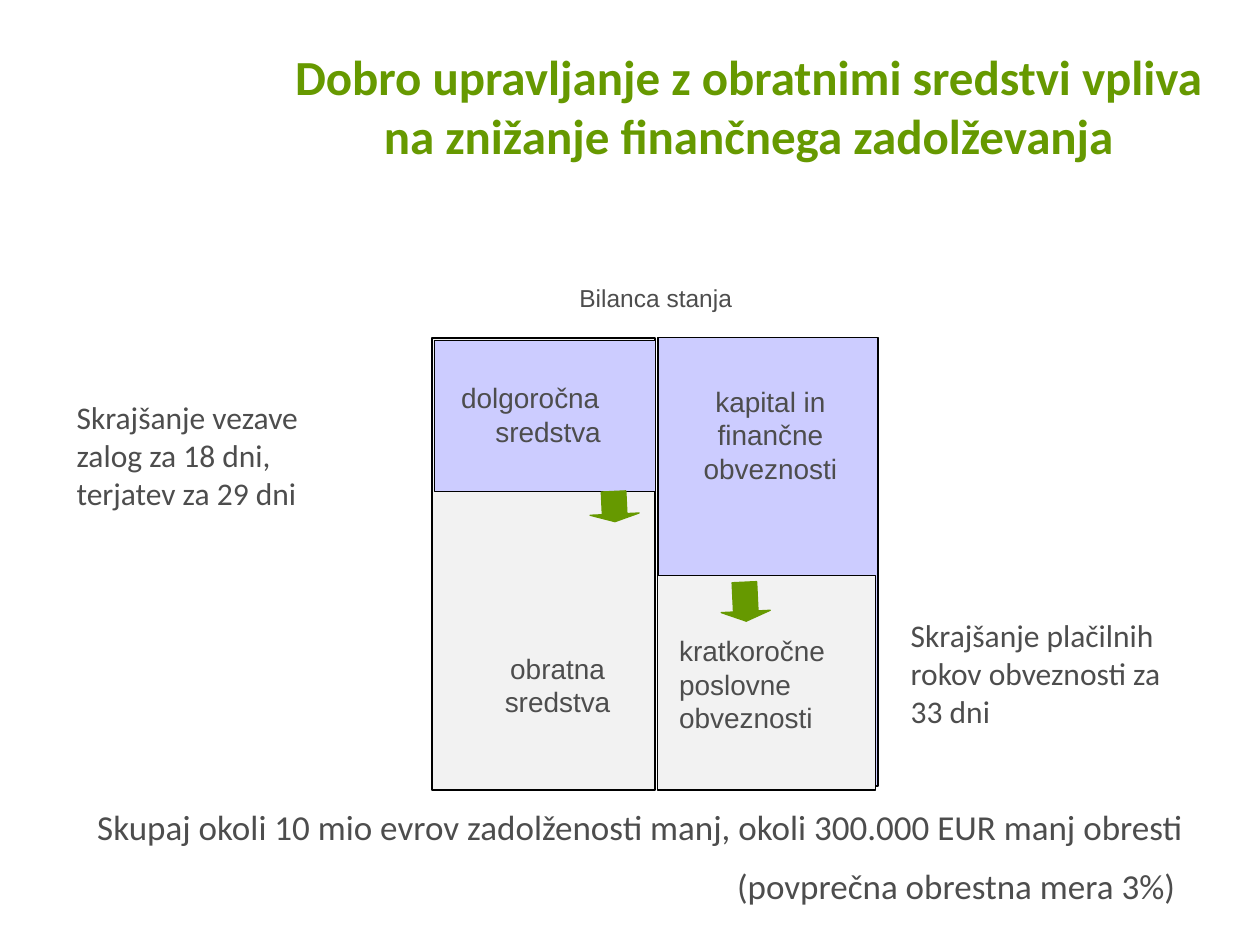
from pptx import Presentation
from pptx.dml.color import RGBColor
from pptx.enum.shapes import MSO_SHAPE
from pptx.enum.text import MSO_ANCHOR, PP_ALIGN
from pptx.util import Emu, Pt

RECTANGLE, UP_ARROW = MSO_SHAPE.RECTANGLE, MSO_SHAPE.UP_ARROW
TOP, MIDDLE = MSO_ANCHOR.TOP, MSO_ANCHOR.MIDDLE
LEFT, CENTER, RIGHT = PP_ALIGN.LEFT, PP_ALIGN.CENTER, PP_ALIGN.RIGHT
PX_PER_INCH = 100
GREEN, GREY, LILAC, PALE, BLACK, WHITE = (
    "669900", "4D4D4D", "CCCCFF", "F2F2F2", "000000", "FFFFFF")


def px(length):
    return Emu(length * 914400 // PX_PER_INCH)


def color(hex_string):
    return RGBColor.from_string(hex_string)


def place(box, left, top, width, height):
    return box[0] + left, box[1] + top, width, height


def write(shape, lines, size, font_name, alignments, font_color=GREY, bold=False, anchor=TOP):
    frame = shape.text_frame
    frame.word_wrap = True
    frame.vertical_anchor = anchor
    frame.text = "\n".join(lines)
    for paragraph, alignment in zip(frame.paragraphs, alignments):
        paragraph.alignment = alignment
        for run in paragraph.runs:
            run.font.size = Pt(size)
            run.font.name = font_name
            run.font.bold = bold
            run.font.color.rgb = color(font_color)
    return frame


def add_block(slide, box, fill, line=None, line_width=0.75, kind=RECTANGLE):
    shape = slide.shapes.add_shape(kind, *map(px, box))
    shape.shadow.inherit = False
    shape.fill.solid()
    shape.fill.fore_color.rgb = color(fill)
    if line:
        shape.line.color.rgb = color(line)
        shape.line.width = Pt(line_width)
    else:
        shape.line.fill.background()
    return shape


def add_label(slide, box, fill, lines, alignments, size=16):
    frame = write(add_block(slide, box, fill), lines, size, "Arial", alignments)
    frame.margin_left = frame.margin_right = frame.margin_top = frame.margin_bottom = 0


def add_down_arrow(slide, box):
    arrow = add_block(slide, box, GREEN, GREEN, kind=UP_ARROW)
    arrow.rotation = 177.3
    arrow.adjustments[0] = 0.5
    arrow.adjustments[1] = 0.25


def add_title(slide, box):
    title = slide.shapes.add_textbox(*map(px, box))
    write(title, ["Dobro upravljanje z obratnimi sredstvi vpliva na znižanje finančnega zadolževanja"],
          28, "Calibri", [CENTER], GREEN, True, MIDDLE)


def add_note(slide, box, lines, size=18, alignment=LEFT):
    note = slide.shapes.add_textbox(*map(px, box))
    frame = write(note, lines, size, "Calibri", [alignment] * len(lines))
    for paragraph in frame.paragraphs[1:]:
        paragraph.space_before = Pt(size / 2)


def add_balance_sheet(slide, box):
    blocks = [
        ((0, 43, 177, 359), PALE, 1),
        ((179, 43, 175, 356), LILAC, 1),
        ((2, 45, 175, 120), LILAC, 0.75),
        ((179, 232, 173, 170), PALE, 0.75),
    ]
    for position, fill, line_width in blocks:
        add_block(slide, place(box, *position), fill, BLACK, line_width)

    labels = [
        ((207, 80, 123, 72), LILAC, ["kapital in finančne obveznosti"], [CENTER]),
        ((196, 278, 136, 72), PALE, ["kratkoročne", "poslovne obveznosti"], [LEFT, LEFT]),
        ((23, 77, 138, 74), LILAC, ["dolgoročna", "sredstva"], [LEFT, CENTER]),
        ((27, 292, 145, 67), PALE, ["obratna", "sredstva"], [CENTER, CENTER]),
    ]
    for position, fill, lines, alignments in labels:
        add_label(slide, place(box, *position), fill, lines, alignments)
    add_label(slide, place(box, 51, 0, 253, 33), WHITE, ["Bilanca stanja"], [CENTER], 14)

    for position in ((125, 165, 39, 24), (229, 237, 39, 31)):
        add_down_arrow(slide, place(box, *position))


def main():
    presentation = Presentation()
    presentation.slide_width, presentation.slide_height = px(1000), px(750)
    slide = presentation.slides.add_slide(presentation.slide_layouts[6])
    add_title(slide, (209, 21, 770, 125))
    add_balance_sheet(slide, (343, 225, 354, 402))
    add_note(slide, (51, 311, 220, 101), ["Skrajšanje vezave zalog za 18 dni, terjatev za 29 dni"])
    add_note(slide, (713, 484, 220, 101), ["Skrajšanje plačilnih rokov obveznosti za 33 dni"])
    add_note(slide, (51, 634, 898, 94), [
        "Skupaj okoli 10 mio evrov zadolženosti manj, okoli 300.000 EUR manj obresti",
        "(povprečna obrestna mera 3%) ",
    ], 20, RIGHT)
    presentation.save("out.pptx")


if __name__ == "__main__":
    main()
